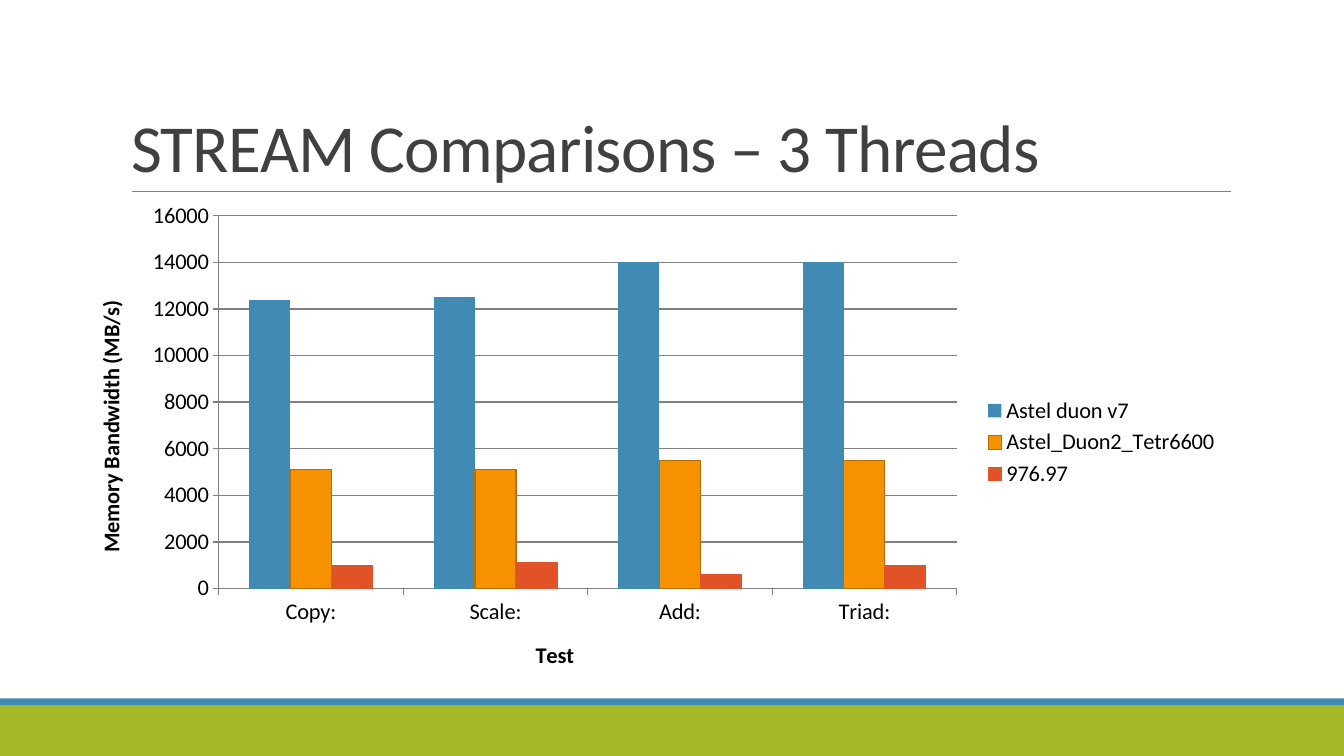
from lxml import etree
from pptx import Presentation
from pptx.chart.data import CategoryChartData
from pptx.dml.color import RGBColor
from pptx.enum.chart import XL_CHART_TYPE as ChartType, XL_LEGEND_POSITION as LegendPosition
from pptx.enum.chart import XL_TICK_MARK as TickMark
from pptx.enum.shapes import MSO_CONNECTOR as Connector, MSO_SHAPE as Shape
from pptx.enum.text import MSO_ANCHOR as Anchor, MSO_AUTO_SIZE as AutoSize, PP_ALIGN as Align
from pptx.oxml import parse_xml
from pptx.oxml.ns import nsdecls, qn
from pptx.util import Inches, Pt

WIDTH, HEIGHT = Inches(13.33), Inches(7.5)
CHART_WIDTH, CHART_HEIGHT = 11.5, 4.98
FONT = "Calibri"
BLACK = RGBColor(0x00, 0x00, 0x00)
DARK_GRAY = RGBColor(0x40, 0x40, 0x40)
GRAY = RGBColor(0x80, 0x80, 0x80)
GREEN = RGBColor(0xA6, 0xB7, 0x27)
BLUE = RGBColor(0x41, 0x8A, 0xB3)
ORANGE = RGBColor(0xF6, 0x92, 0x00)
BROWN = RGBColor(0xB8, 0x6E, 0x00)
RED = RGBColor(0xDF, 0x53, 0x27)

TESTS = ["Copy:", "Scale:", "Add:", "Triad:"]
# Name, bandwidth for each test, fill colour, outline colour
SERIES = [
    ("Astel duon v7", [12400, 12500, 14000, 14000], BLUE, None),
    ("Astel_Duon2_Tetr6600", [5100, 5100, 5500, 5500], ORANGE, BROWN),
    ("976.97", [1000, 1100, 600, 1000], RED, RED),
]
# Places inside the chart, in inches from its corner
PLOT_AREA = {"x": 1.47, "y": 0.24, "w": 7.32, "h": 3.7}
VALUE_TITLE = {"x": 0.21, "y": 1.04}


def set_values(target, values):
    for name, value in values.items():
        setattr(target, name, value)


def format_font(font, size, color=BLACK, bold=False):
    set_values(font, {"name": FONT, "size": Pt(size), "bold": bold})
    font.color.rgb = color


def add_band(slide, top, height, color):
    band = slide.shapes.add_shape(Shape.RECTANGLE, 0, Inches(top), WIDTH, Inches(height))
    band.shadow.inherit = False
    band.fill.solid()
    band.fill.fore_color.rgb = color
    band.line.fill.background()


def add_rule(slide, left, right, top):
    rule = slide.shapes.add_connector(
        Connector.STRAIGHT, Inches(left), Inches(top), Inches(right), Inches(top))
    rule.line.width = Pt(0.5)
    rule.line.color.rgb = GRAY
    etree.SubElement(rule._element.spPr, qn("a:effectLst"))


def format_title(title, text):
    set_values(title, {"left": Inches(1.2), "top": Inches(0.31),
                       "width": Inches(11), "height": Inches(1.59)})
    set_values(title.text_frame, {"text": text, "auto_size": AutoSize.NONE,
                                  "vertical_anchor": Anchor.BOTTOM, "word_wrap": True})
    paragraph = title.text_frame.paragraphs[0]
    set_values(paragraph, {"alignment": Align.LEFT, "line_spacing": 0.85})
    run = paragraph.runs[0]
    format_font(run.font, 48, DARK_GRAY)
    run.font._element.set("spc", "-50")


def format_axis(axis, title, gridlines):
    set_values(axis, {"has_major_gridlines": gridlines, "has_title": True,
                      "major_tick_mark": TickMark.OUTSIDE, "minor_tick_mark": TickMark.NONE})
    format_font(axis.tick_labels.font, 16)
    axis.axis_title.text_frame.text = title
    format_font(axis.axis_title.text_frame.paragraphs[0].runs[0].font, 16, bold=True)
    lines = [axis.format.line]
    if gridlines:
        lines.append(axis.major_gridlines.format.line)
    for line in lines:
        line.color.rgb = GRAY
        line.width = Pt(1)


def format_series(series, fill_color, line_color):
    series.invert_if_negative = False
    series.format.fill.solid()
    series.format.fill.fore_color.rgb = fill_color
    line = series.format.line
    if line_color is None:
        line.fill.background()
    else:
        line.color.rgb = line_color
        line.width = Pt(0.75)


def place_part(part, position, index, target=""):
    """Give a chart part a fixed place, as shares of the chart's size."""
    extents = {"x": CHART_WIDTH, "y": CHART_HEIGHT, "w": CHART_WIDTH, "h": CHART_HEIGHT}
    modes = "".join(f'<c:{side}Mode val="edge"/>' for side in "xy")
    shares = "".join(f'<c:{side} val="{length / extents[side]:.4f}"/>'
                     for side, length in position.items())
    layout = parse_xml(f'<c:layout {nsdecls("c")}><c:manualLayout>'
                       f'{target}{modes}{shares}</c:manualLayout></c:layout>')
    for previous in part.findall(qn("c:layout")):
        part.remove(previous)
    part.insert(index, layout)


def add_bandwidth_chart(slide):
    data = CategoryChartData(number_format="General")
    data.categories = TESTS
    for name, values, *_ in SERIES:
        data.add_series(name, values)
    chart = slide.shapes.add_chart(ChartType.COLUMN_CLUSTERED, Inches(0.7), Inches(1.9),
                                   Inches(CHART_WIDTH), Inches(CHART_HEIGHT), data).chart
    set_values(chart, {"has_title": False, "has_legend": True})
    format_font(chart.font, 10)

    # Columns
    plot = chart.plots[0]
    set_values(plot, {"gap_width": 150, "overlap": 0, "vary_by_categories": False})
    for series, (_, _, fill_color, line_color) in zip(plot.series, SERIES):
        format_series(series, fill_color, line_color)

    # Axes and legend
    format_axis(chart.category_axis, "Test", gridlines=False)
    format_axis(chart.value_axis, "Memory Bandwidth (MB/s)", gridlines=True)
    set_values(chart.value_axis, {"minimum_scale": 0, "maximum_scale": 16000,
                                  "major_unit": 2000})
    set_values(chart.legend, {"position": LegendPosition.RIGHT, "include_in_layout": False})
    format_font(chart.legend.font, 16)

    # Fixed places
    place_part(chart._chartSpace.chart.plotArea, PLOT_AREA, 0,
               '<c:layoutTarget val="inner"/>')
    place_part(chart.value_axis.axis_title._element, VALUE_TITLE, 1)


def main():
    presentation = Presentation()
    set_values(presentation, {"slide_width": WIDTH, "slide_height": HEIGHT})
    slide = presentation.slides.add_slide(presentation.slide_layouts.get_by_name("Title Only"))

    # Footer bands and the rule under the title
    add_band(slide, 7, 0.5, GREEN)
    add_band(slide, 6.93, 0.07, BLUE)
    add_rule(slide, 1.31, 12.21, 1.9)

    # Title and chart
    format_title(slide.shapes.title, "STREAM Comparisons – 3 Threads")
    add_bandwidth_chart(slide)
    presentation.save("out.pptx")


if __name__ == "__main__":
    main()
